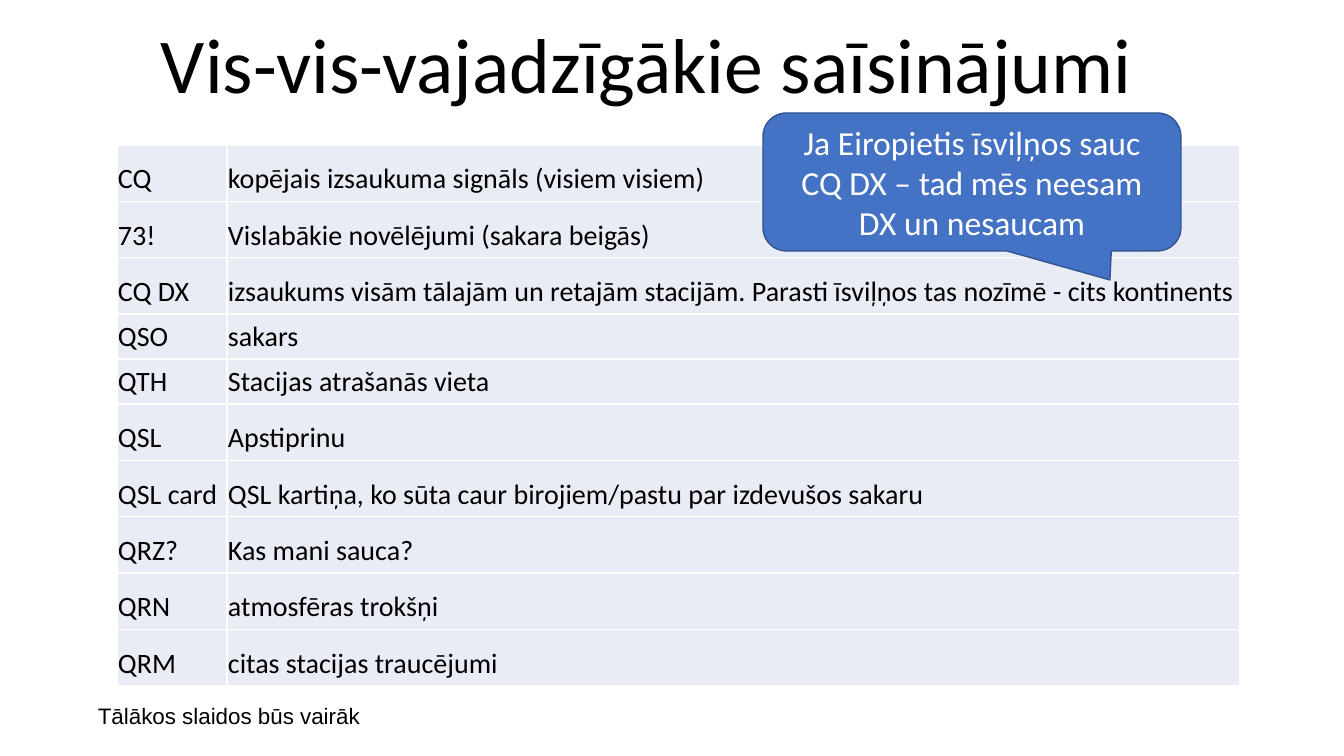
from pptx import Presentation
from pptx.dml.color import RGBColor
from pptx.enum.shapes import MSO_SHAPE
from pptx.enum.text import MSO_ANCHOR, PP_ALIGN
from pptx.util import Pt
from pptx.oxml import parse_xml
from pptx.oxml.ns import nsdecls

CALLOUT = MSO_SHAPE.ROUNDED_RECTANGULAR_CALLOUT
LOW, MID = MSO_ANCHOR.BOTTOM, MSO_ANCHOR.MIDDLE
LEFT, CENTER = PP_ALIGN.LEFT, PP_ALIGN.CENTER
SCALE = 914400 / 100.8
COLORS = {"ink": "000000", "white": "FFFFFF", "cell": "E9EBF5",
          "blue": "4472C4", "edge": "325490"}
TERMS = [
    ("CQ", "kopējais izsaukuma signāls (visiem visiem)"),
    ("73!", "Vislabākie novēlējumi (sakara beigās)"),
    ("CQ DX", "izsaukums visām tālajām un retajām stacijām. "
              "Parasti īsviļņos tas nozīmē - cits kontinents"),
    ("QSO", "sakars"),
    ("QTH", "Stacijas atrašanās vieta"),
    ("QSL", "Apstiprinu"),
    ("QSL card", "QSL kartiņa, ko sūta caur birojiem/pastu par izdevušos sakaru"),
    ("QRZ?", "Kas mani sauca?"),
    ("QRN", "atmosfēras trokšņi"),
    ("QRM", "citas stacijas traucējumi"),
]
SHORT = {"QSO", "QTH"}


def px(size):
    return round(size * SCALE)


def color(name):
    return RGBColor.from_string(COLORS[name])


class Deck:
    """Holds the text style and the current slide."""

    def __init__(self, show, font):
        self.font = font
        self.slide = show.slides.add_slide(show.slide_layouts[6])

    def label(self, frame, text, size, ink="ink", align=LEFT, font=None, space=None):
        para = frame.paragraphs[0]
        para.alignment = align
        if space:
            para.line_spacing = space
        run = para.add_run()
        run.text = text
        run.font.name = font or self.font
        run.font.size = Pt(size)
        run.font.color.rgb = color(ink)

    def text(self, box, text, size, anchor, **style):
        frame = self.slide.shapes.add_textbox(*map(px, box)).text_frame
        frame.word_wrap = True
        frame.vertical_anchor = anchor
        self.label(frame, text, size, **style)

    def border(self, cell):
        props = cell._tc.get_or_add_tcPr()
        for side in "LRTB":
            props.append(parse_xml(
                f'<a:ln{side} {nsdecls("a")} w="{Pt(0.96)}"><a:solidFill>'
                f'<a:srgbClr val="{COLORS["white"]}"/></a:solidFill></a:ln{side}>'))

    def table(self, box, rows, first, low, size):
        shape = self.slide.shapes.add_table(len(rows), 2, *map(px, box))
        grid = shape.table
        grid.first_row = grid.horz_banding = False
        grid.columns[0].width = px(first)
        grid.columns[1].width = px(box[2] - first)
        tall = (box[3] - low * len(SHORT)) / (len(rows) - len(SHORT))
        for y, row in enumerate(rows):
            grid.rows[y].height = px(low if row[0] in SHORT else tall)
            for x, text in enumerate(row):
                cell = grid.cell(y, x)
                self.border(cell)
                cell.fill.solid()
                cell.fill.fore_color.rgb = color("cell")
                cell.vertical_anchor = LOW
                cell.margin_left = cell.margin_right = px(1)
                cell.margin_top = cell.margin_bottom = px(5)
                self.label(cell.text_frame, text, size)

    def bubble(self, box, tip, text, size):
        shape = self.slide.shapes.add_shape(CALLOUT, *map(px, box))
        shape.shadow.inherit = False
        for i, value in enumerate(tip):
            shape.adjustments[i] = value
        shape.fill.solid()
        shape.fill.fore_color.rgb = color("blue")
        shape.line.color.rgb = color("edge")
        shape.line.width = Pt(1)
        frame = shape.text_frame
        frame.word_wrap = True
        frame.vertical_anchor = MID
        self.label(frame, text, size, ink="white", align=CENTER)


def main():
    show = Presentation()
    show.slide_width, show.slide_height = px(1344), px(756)
    deck = Deck(show, "Calibri")
    deck.text((143, 0, 1008, 113), "Vis-vis-vajadzīgākie saīsinājumi", 55.5, LOW,
              align=CENTER, space=0.8)
    deck.text((88, 700, 1200, 34), "Tālākos slaidos būs vairāk", 16, MID,
              font="Arial", space=0.9)
    deck.table((117, 145, 1123, 541), TERMS, 110, 45, 20)
    deck.bubble((763, 113, 418, 138), (0.33, 0.71, 0.17),
                "Ja Eiropietis īsviļņos sauc CQ DX – tad mēs neesam DX un nesaucam", 24)
    show.save("out.pptx")


if __name__ == "__main__":
    main()
